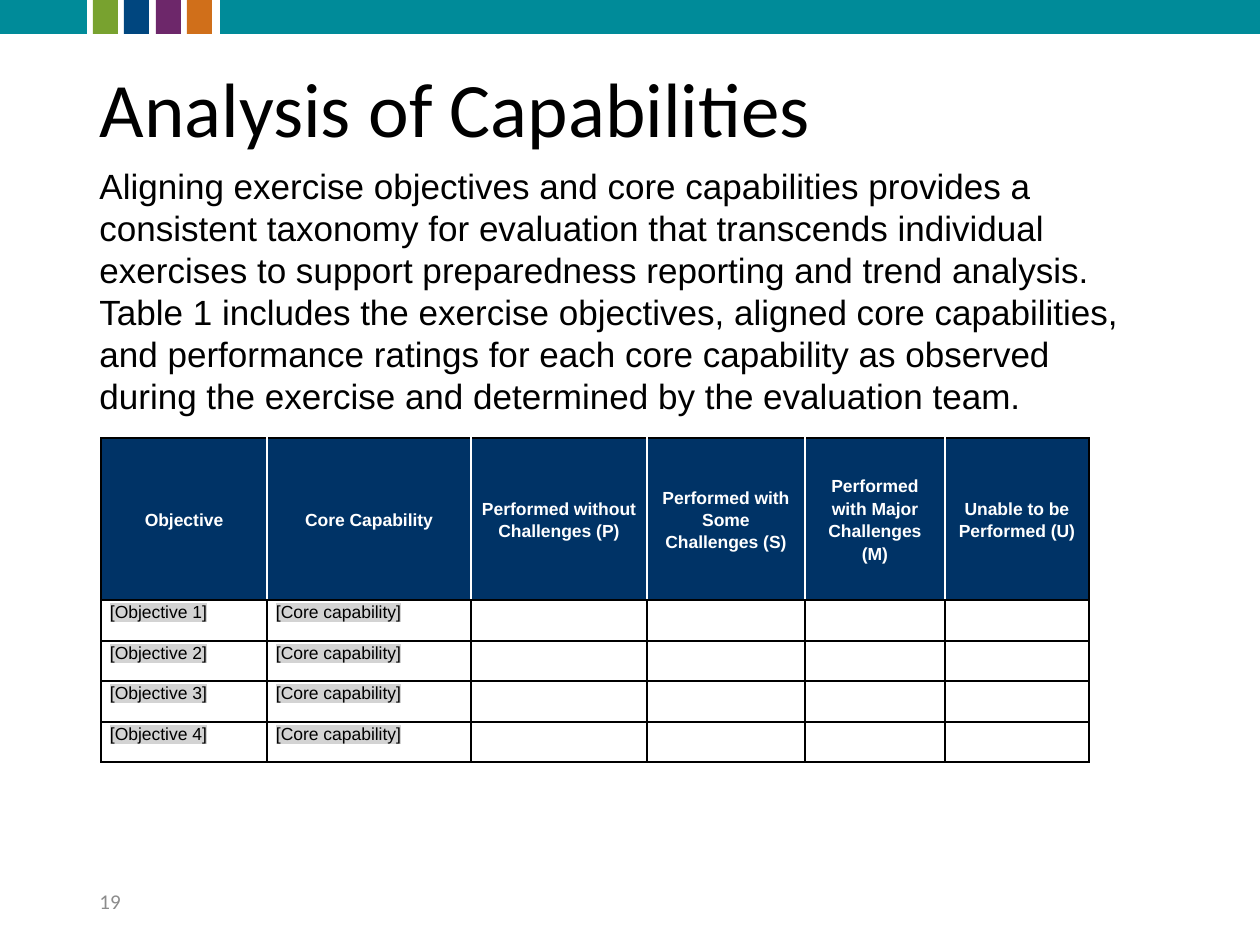
from lxml import etree
from pptx import Presentation
from pptx import util as u
from pptx.dml.color import RGBColor
from pptx.enum import shapes, text
from pptx.oxml import ns

TEAL = RGBColor(0x00, 0x8B, 0x99)
GREEN = RGBColor(0x78, 0xA2, 0x2F)
BLUE = RGBColor(0x00, 0x46, 0x7F)
PURPLE = RGBColor(0x6D, 0x27, 0x6A)
ORANGE = RGBColor(0xD0, 0x6F, 0x1A)
NAVY = RGBColor(0x00, 0x33, 0x66)
GRAY = RGBColor(0x8C, 0x8C, 0x8C)
SILVER = RGBColor(0xD3, 0xD3, 0xD3)
BLACK = RGBColor(0, 0, 0)
WHITE = RGBColor(0xFF, 0xFF, 0xFF)

PX_PER_INCH = 126
TITLE_ONLY = 5

INTRO = [
    "Aligning exercise objectives and core capabilities provides a",
    "consistent taxonomy for evaluation that transcends individual",
    "exercises to support preparedness reporting and trend analysis.",
    "Table 1 includes the exercise objectives, aligned core capabilities,",
    "and performance ratings for each core capability as observed",
    "during the exercise and determined by the evaluation team.",
]
HEADINGS = [
    "Objective",
    "Core Capability",
    "Performed without Challenges (P)",
    "Performed with Some Challenges (S)",
    "Performed with Major Challenges (M)",
    "Unable to be Performed (U)",
]
COLUMN_WIDTHS = [166, 204, 176, 158, 140, 144]
OBJECTIVE_COUNT = 4


def px(length):
    return u.Emu(round(length * u.Inches(1) / PX_PER_INCH))


def add_color(parent, tag, color):
    """Append a DrawingML element that wraps one RGB colour."""
    element = etree.SubElement(parent, ns.qn(tag))
    etree.SubElement(element, ns.qn("a:srgbClr"), val=str(color))
    return element


class SlideBuilder:
    heading_font = "Calibri"
    body_font = "Arial"

    def __init__(self, slide):
        self.slide = slide

    def add_span(self, para, words, size, color=BLACK, font=body_font, bold=False):
        span = para.add_run()
        span.text = words
        span.font.size = u.Pt(size)
        span.font.name = font
        span.font.bold = bold
        span.font.color.rgb = color
        return span

    def highlight(self, span, color):
        properties = span._r.get_or_add_rPr()
        mark = add_color(properties, "a:highlight", color)
        properties.find(ns.qn("a:solidFill")).addnext(mark)

    def bar(self, left, width, color):
        box = self.slide.shapes.add_shape(
            shapes.MSO_SHAPE.RECTANGLE, px(left), 0, px(width), px(34))
        box.shadow.inherit = False
        box.fill.solid()
        box.fill.fore_color.rgb = color
        box.line.fill.background()

    def title(self, words, left, top, width, height):
        box = self.slide.shapes.title
        box.left, box.top, box.width, box.height = map(px, (left, top, width, height))
        frame = box.text_frame
        frame.auto_size = text.MSO_AUTO_SIZE.NONE
        frame.vertical_anchor = text.MSO_ANCHOR.MIDDLE
        para = frame.paragraphs[0]
        para.alignment = text.PP_ALIGN.LEFT
        para.line_spacing = 0.9
        self.add_span(para, words, 44, font=self.heading_font)

    def text_box(self, lines, left, top, width, height, size, **style):
        box = self.slide.shapes.add_textbox(*map(px, (left, top, width, height)))
        frame = box.text_frame
        frame.word_wrap = True
        frame.vertical_anchor = text.MSO_ANCHOR.MIDDLE
        for index, line in enumerate(lines):
            para = frame.add_paragraph() if index else frame.paragraphs[0]
            self.add_span(para, line, size, **style)

    def borders(self, cell, left, right, bottom_width):
        edges = [("L", left, 1), ("R", right, 1), ("T", BLACK, 1), ("B", BLACK, bottom_width)]
        properties = cell._tc.get_or_add_tcPr()
        for side, color, width in edges:
            line = etree.SubElement(properties, ns.qn(f"a:ln{side}"), w=str(int(u.Pt(width))))
            add_color(line, "a:solidFill", color)

    def cell_text(self, cell, words, **style):
        para = cell.text_frame.paragraphs[0]
        para.line_spacing = 1.15
        para.space_before = para.space_after = u.Pt(2)
        return para, self.add_span(para, words, 10, **style)

    def ratings_table(self, left, top, headings, rows, widths):
        heights = [162] + [40 + index % 2 for index in range(1, len(rows) + 1)]
        frame = self.slide.shapes.add_table(
            len(heights), len(widths), px(left), px(top), px(sum(widths)), px(sum(heights)))
        table = frame.table
        table.horz_banding = False
        for column, width in zip(table.columns, widths):
            column.width = px(width)
        for row, height in zip(table.rows, heights):
            row.height = px(height)

        last_column, last_row = len(widths) - 1, len(rows)
        for r, values in enumerate([headings] + rows):
            for c, words in enumerate(values):
                cell = table.cell(r, c)
                cell.margin_left = cell.margin_right = px(9)
                cell.margin_top = cell.margin_bottom = 0
                if r == 0:
                    self.borders(cell, WHITE if c else BLACK,
                                 WHITE if c < last_column else BLACK, 1)
                    cell.fill.solid()
                    cell.fill.fore_color.rgb = NAVY
                    cell.vertical_anchor = text.MSO_ANCHOR.MIDDLE
                    para, _ = self.cell_text(cell, words, color=WHITE, bold=True)
                    para.alignment = text.PP_ALIGN.CENTER
                    continue
                self.borders(cell, BLACK, BLACK, 1.5 if r == last_row else 1)
                cell.fill.background()
                if words:
                    _, span = self.cell_text(cell, words)
                    self.highlight(span, SILVER)


def main():
    deck = Presentation()
    deck.slide_width, deck.slide_height = u.Inches(10), u.Inches(7.5)
    page = SlideBuilder(deck.slides.add_slide(deck.slide_layouts[TITLE_ONLY]))

    page.bar(0, 87, TEAL)
    for index, color in enumerate([GREEN, BLUE, PURPLE, ORANGE]):
        page.bar(93 + index * 63 // 2, 25, color)
    page.bar(220, 1040, TEAL)

    page.title("Analysis of Capabilities", 87, 50, 1086, 126)
    rows = [[f"[Objective {number}]", "[Core capability]"] + [""] * 4
            for number in range(1, OBJECTIVE_COUNT + 1)]
    page.ratings_table(101, 438, HEADINGS, rows, COLUMN_WIDTHS)
    page.text_box(["19"], 87, 876, 284, 50, 12, color=GRAY, font=page.heading_font)
    page.text_box(INTRO, 87, 157, 1062, 267, 20)

    deck.save("out.pptx")


if __name__ == "__main__":
    main()
